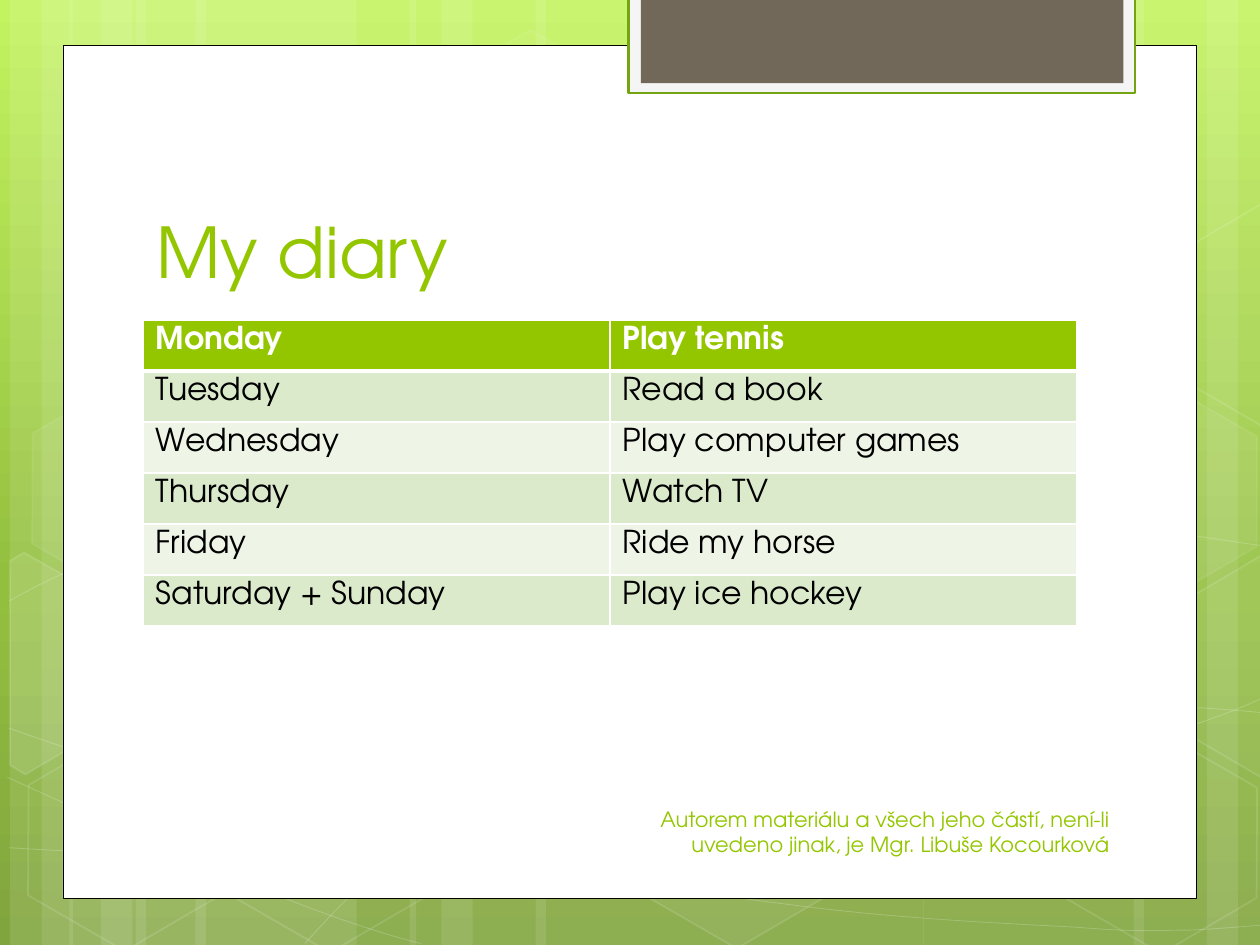
import copy
import math

import pptx
import pptx.util
from pptx.dml.color import RGBColor
from pptx.enum.shapes import MSO_SHAPE
from pptx.enum.text import MSO_ANCHOR, PP_ALIGN
from pptx.oxml import parse_xml
from pptx.oxml.ns import nsdecls, qn
from pptx.util import Cm, Pt

FONT = "TeX Gyre Adventor"
COLORS = {
    "top": "C3F35F", "middle": "93BF3F", "bottom": "81A53E",
    "white": "FFFFFF", "black": "000000", "green": "94C600",
    "tab": "F5F5F5", "tab_line": "74A510", "tab_core": "71685A",
    "band": "DCEACC", "band_light": "EEF5E7",
}
DIARY = [
    ("Monday", "Play tennis"),
    ("Tuesday", "Read a book"),
    ("Wednesday", "Play computer games"),
    ("Thursday", "Watch TV"),
    ("Friday", "Ride my horse"),
    ("Saturday + Sunday", "Play ice hockey"),
]
STRIP_GROUPS = [(0.2, 1, 4.45), (1.4, 1, 4.45), (25.6, -1, 4.45), (8.26, 1, 7.82)]
CURVES = [
    [(0.18, 17.09), (1.55, 17.17), (2.92, 17.25), (4.83, 17.22), (6.73, 17.2),
     (9.09, 17.15), (11.63, 16.89), (14.17, 16.64), (17.78, 16.15), (20.12, 15.67),
     (22.43, 15.19), (24.82, 14.43), (25.58, 14)],
    [(0.18, 12.12), (0.91, 11.71), (1.65, 11.33), (3.07, 10.95), (4.52, 10.57),
     (6.58, 10.01), (8.81, 9.83), (11.07, 9.65), (13.82, 9.63), (16.61, 9.83),
     (19.41, 10.03), (24.05, 10.82), (25.58, 11.02)],
    [(0.15, 15.67), (3.23, 17.07), (6.27, 18.47), (8.48, 19.02)],
    [(0.18, 14.68), (0.97, 14.96), (1.78, 15.24), (3.25, 15.65), (4.72, 16.03),
     (6.93, 16.66), (9.07, 17.09), (11.18, 17.53), (13.84, 17.98), (15.95, 18.24),
     (18.06, 18.52), (20.32, 18.62), (21.67, 18.69), (22.99, 18.8), (23.34, 18.75),
     (24, 18.75), (24.66, 18.72), (25.12, 18.67), (25.58, 18.64)],
    [(6.15, 19.02), (6.6, 18.52), (7.06, 18.01), (7.67, 17.55), (8.28, 17.09),
     (9.14, 16.59), (9.86, 16.23), (10.57, 15.88), (11, 15.72), (11.94, 15.47),
     (12.85, 15.21), (14.55, 14.86), (15.44, 14.68), (16.36, 14.5), (16.48, 14.5),
     (17.27, 14.45), (18.06, 14.38), (19.3, 14.3), (20.17, 14.27), (21.06, 14.25),
     (22.5, 14.27), (22.5, 14.27), (23, 14.27), (23.7, 14.27), (24.21, 14.27),
     (24.66, 14.3), (25.1, 14.33), (25.55, 14.38)],
]
HEXAGONS = [
    (8.48, 0.91, 4, 8), (12.62, 14.96, 6, 12), (0.28, 15.01, 0, 12),
    (0.36, 7.92, 7, 8), (4.42, 15.04, 0, 12), (19.13, 11.51, 10, 12),
    (21.18, 15.06, 0, 12), (21.18, 7.98, 7, 8),
]
LEFT_CUT = [(0.2, 11.3), (0.48, 11.13), (2.44, 12.24), (2.41, 14.48), (0.51, 15.6), (0.2, 15.42)]
RIGHT_CUT = [(23.52, 12.32), (25.43, 11.2), (25.63, 11.33), (25.63, 15.57), (25.45, 15.67), (23.52, 14.55)]
UPPER_CUT = [(x, y - 7.09) for x, y in RIGHT_CUT]
CUT_HEXAGONS = [
    (LEFT_CUT, (0.92, 13.59), 10), (RIGHT_CUT, (25.02, 13.21), 4), (UPPER_CUT, (25.02, 6.12), 0),
]
TILT = 30


def rgb(name):
    """Return the named colour."""
    return RGBColor.from_string(COLORS[name])


def style(sp, fill=None, line=None, width=1, fill_alpha=100, line_alpha=100):
    """Set fill, line and opacity in percent, without a shadow."""
    sp.shadow.inherit = False
    alphas = []
    if fill:
        sp.fill.solid()
        sp.fill.fore_color.rgb = rgb(fill)
        alphas.append(fill_alpha)
    else:
        sp.fill.background()
    if line:
        sp.line.color.rgb = rgb(line)
        sp.line.width = Pt(width)
        alphas.append(line_alpha)
    else:
        sp.line.fill.background()
    for clr, alpha in zip(sp._element.spPr.iter(qn("a:srgbClr")), alphas):
        if alpha < 100:
            clr.append(parse_xml(f'<a:alpha {nsdecls("a")} val="{alpha * 1000}"/>'))


def add_rect(s, x, y, w, h, **look):
    """Add a styled rectangle."""
    sp = s.shapes.add_shape(MSO_SHAPE.RECTANGLE, Cm(x), Cm(y), Cm(w), Cm(h))
    style(sp, **look)
    return sp


def add_outline(s, points, close):
    """Add a freeform through the points."""
    start, *rest = [(x * 100, y * 100) for x, y in points]
    fb = s.shapes.build_freeform(*start, scale=Cm(0.01))
    fb.add_line_segments(rest, close=close)
    return fb.convert_to_shape()


def add_curve(s, points):
    """Add a chain of cubic curves as a thin line."""
    sp = add_outline(s, points, False)
    segments = list(sp._element.iter(qn("a:lnTo")))
    for i in range(0, len(segments), 3):
        cubic = parse_xml(f'<a:cubicBezTo {nsdecls("a")}/>')
        segments[i].addprevious(cubic)
        for segment in segments[i:i + 3]:
            cubic.append(segment[0])
            segment.getparent().remove(segment)
    style(sp, line="white", width=0.5, line_alpha=20)


def add_cut_hexagon(s, points, center, fill_alpha):
    """Add a tilted hexagon that is cut off at the slide's edge."""
    cx, cy = center
    cos, sin = math.cos(math.radians(TILT)), math.sin(math.radians(TILT))
    upright = [(cx + (x - cx) * cos + (y - cy) * sin, cy - (x - cx) * sin + (y - cy) * cos)
               for x, y in points]
    sp = add_outline(s, upright, True)
    sp.rotation = TILT
    style(sp, "white" if fill_alpha else None, "white", 1, fill_alpha, 12)


def set_background(s):
    """Fill the background with the vertical green gradient."""
    fill = s.background.fill
    fill.gradient()
    fill.gradient_angle = 270
    first = fill.gradient_stops[0]._gs
    first.addnext(copy.deepcopy(first))
    for stop, name, pos in zip(fill.gradient_stops, ("top", "middle", "bottom"), (0, 0.62, 1)):
        stop.color.rgb = rgb(name)
        stop.position = pos


def add_backdrop(s, height):
    """Draw the translucent strips, curves and hexagons."""
    for edge, way, wide in STRIP_GROUPS:
        for offset, w in ((2.54, wide), (0, 1.27), (0.64, 2.11)):
            x = edge + offset if way > 0 else edge - offset - w
            sp = add_rect(s, x, 0, w, height, fill="white", fill_alpha=10)
            sp.rotation = 0 if way > 0 else 180
    for curve in CURVES:
        add_curve(s, curve)
    for x, y, fill_alpha, line_alpha in HEXAGONS:
        sp = s.shapes.add_shape(MSO_SHAPE.HEXAGON, Cm(x), Cm(y), Cm(4.45), Cm(3.86))
        sp.adjustments[0] = 0.285
        sp.rotation = TILT
        style(sp, "white" if fill_alpha else None, "white", 1, fill_alpha, line_alpha)
    for cut in CUT_HEXAGONS:
        add_cut_hexagon(s, *cut)


def add_panel(s, x, y, w, h):
    """Draw the white page and the tab that hangs over its top edge."""
    add_rect(s, x, y, w, h, fill="white", line="black", width=0.5)
    add_rect(s, x + 11.4, -0.05, 10.21, 1.93, fill="tab", line="tab_line", width=1.25)
    add_rect(s, x + 11.65, -0.05, 9.73, 1.73, fill="tab_core")


def add_text(s, x, y, w, h, text, size, anchor, align=PP_ALIGN.LEFT):
    """Add a green text box."""
    tf = s.shapes.add_textbox(Cm(x), Cm(y), Cm(w), Cm(h)).text_frame
    tf.word_wrap = True
    tf.vertical_anchor = anchor
    p = tf.paragraphs[0]
    p.text = text
    p.alignment = align
    p.font.size, p.font.name = Pt(size), FONT
    p.font.color.rgb = rgb("green")


def set_borders(cell, bottom):
    """Give a cell white borders, with its own bottom width in points."""
    tcPr = cell._tc.get_or_add_tcPr()
    for i, (side, width) in enumerate((("L", 1), ("R", 1), ("T", 1), ("B", bottom))):
        tcPr.insert(i, parse_xml(
            f'<a:ln{side} {nsdecls("a")} w="{Pt(width)}"><a:solidFill>'
            f'<a:srgbClr val="{COLORS["white"]}"/></a:solidFill></a:ln{side}>'))


def add_diary(s, x, y, w, h):
    """Add the table of days and activities."""
    table = s.shapes.add_table(len(DIARY), 2, Cm(x), Cm(y), Cm(w), Cm(h)).table
    for i, row in enumerate(DIARY):
        fill = "green" if i == 0 else "band" if i % 2 else "band_light"
        for j, text in enumerate(row):
            cell = table.cell(i, j)
            cell.fill.solid()
            cell.fill.fore_color.rgb = rgb(fill)
            set_borders(cell, 3 if i == 0 else 1)
            p = cell.text_frame.paragraphs[0]
            p.text = text
            p.font.size, p.font.name, p.font.bold = Pt(18), FONT, i == 0
            p.font.color.rgb = rgb("black" if i else "white")


def main():
    """Build and save the slide."""
    prs = pptx.Presentation()
    prs.slide_width, prs.slide_height = Cm(25.4), Cm(19.05)
    s = prs.slides.add_slide(prs.slide_layouts[6])
    set_background(s)
    add_backdrop(s, 19.05)
    add_panel(s, 1.27, 0.91, 22.86, 17.2)
    add_text(s, 2.9, 2.84, 19.51, 3.18, "My diary", 40, MSO_ANCHOR.BOTTOM)
    add_diary(s, 2.89, 6.45, 18.82, 6.17)
    add_text(s, 12.89, 16.26, 9.73, 1.02,
             "Autorem materiálu a všech jeho částí, není-li uvedeno jinak, je Mgr. Libuše Kocourková",
             12, MSO_ANCHOR.MIDDLE, PP_ALIGN.RIGHT)
    prs.save("out.pptx")


if __name__ == "__main__":
    main()
